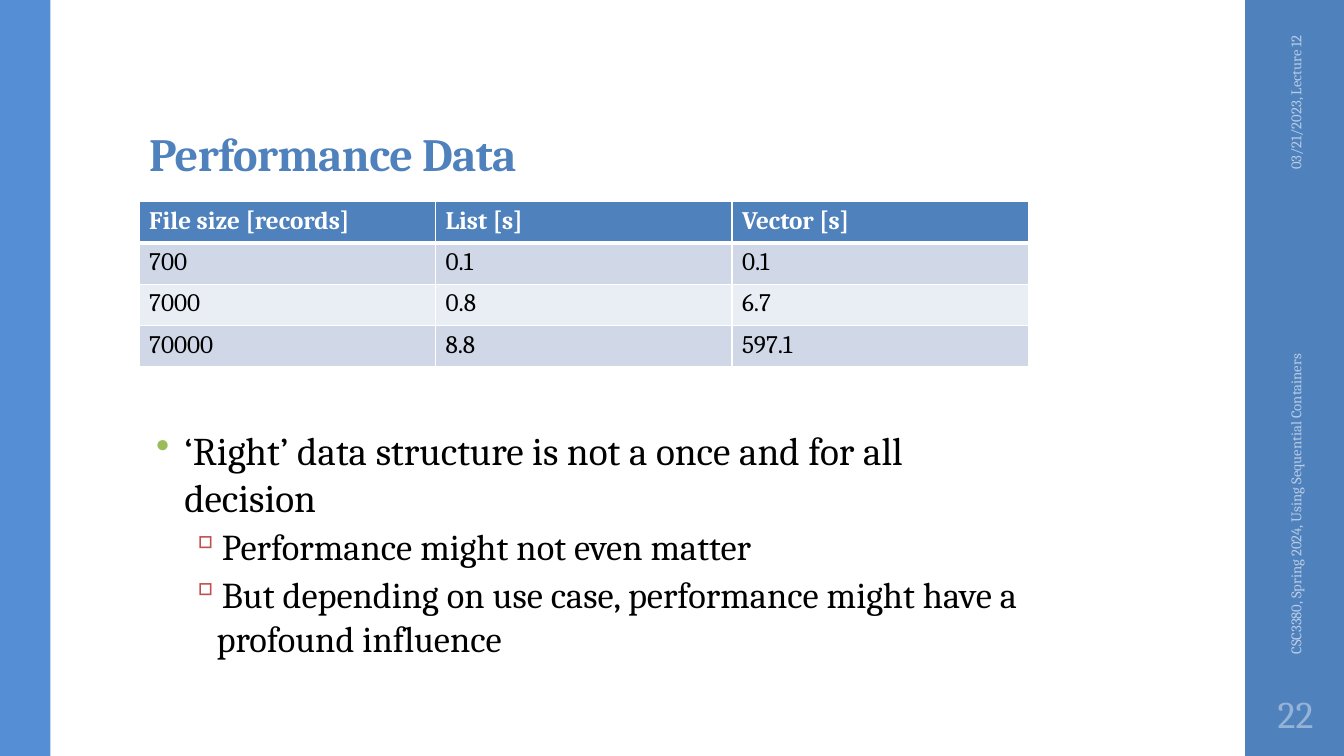
from lxml import etree
from pptx import Presentation
from pptx.dml.color import RGBColor
from pptx.enum.shapes import MSO_SHAPE
from pptx.enum.text import MSO_ANCHOR, PP_ALIGN
from pptx.oxml.ns import qn
from pptx.util import Inches, Pt

RECTANGLE = MSO_SHAPE.RECTANGLE
TOP, MIDDLE, BOTTOM = MSO_ANCHOR.TOP, MSO_ANCHOR.MIDDLE, MSO_ANCHOR.BOTTOM
LEFT, CENTER, RIGHT = PP_ALIGN.LEFT, PP_ALIGN.CENTER, PP_ALIGN.RIGHT

THEME = {
    "font": "Cambria",
    "blue": "4F81BD", "light_blue": "558ED5", "footer": "B9CDE5", "number": "95B3D7",
    "white": "FFFFFF", "black": "000000", "odd_row": "D0D8E8", "even_row": "E9EDF4",
    "green": "9BBB59", "red": "C0504D",
    "title_size": 33, "table_size": 18, "footer_size": 10.5, "number_size": 27,
    "point_size": 28, "subpoint_size": 26,
}


def style(paragraph, size, color, bold=False):
    for run in paragraph.runs:
        run.font.name = THEME["font"]
        run.font.size = Pt(THEME[size])
        run.font.bold = bold
        run.font.color.rgb = RGBColor.from_string(THEME[color])


def add_text(box, text, size, color, anchor=TOP, align=LEFT, bold=False):
    left, top, width, height = map(Inches, box)
    textbox = slide.shapes.add_textbox(left, top, width, height)
    frame = textbox.text_frame
    frame.word_wrap = True
    frame.vertical_anchor = anchor
    frame.text = text
    for paragraph in frame.paragraphs:
        paragraph.alignment = align
        style(paragraph, size, color, bold)
    return textbox


prs = Presentation()
prs.slide_width = Inches(13.33)
prs.slide_height = Inches(7.5)
slide = prs.slides.add_slide(prs.slide_layouts[6])

for left, width, color in [(12.35, 1, "blue"), (0, 0.5, "light_blue")]:
    band = slide.shapes.add_shape(RECTANGLE, Inches(left), 0, Inches(width), prs.slide_height)
    band.shadow.inherit = False
    band.fill.solid()
    band.fill.fore_color.rgb = RGBColor.from_string(THEME[color])
    band.line.fill.background()

title = add_text((1.38, 0.32, 10.6, 1.53), "Performance Data", "title_size", "blue", BOTTOM, bold=True)
title.text_frame.margin_top = Inches(0.03)
heading = title.text_frame.paragraphs[0]
heading.line_spacing = 0.9
heading.runs[0].font._element.set("spc", "-40")

timings = [
    ("File size [records]", "List [s]", "Vector [s]"),
    ("700", "0.1", "0.1"),
    ("7000", "0.8", "6.7"),
    ("70000", "8.8", "597.1"),
]
row_fills = ["blue", "odd_row", "even_row", "odd_row"]
table = slide.shapes.add_table(4, 3, Inches(1.38), Inches(2), Inches(8.82), Inches(1.62)).table
for column in table.columns:
    column.width = Inches(2.94)
for row_index, values in enumerate(timings):
    is_header = row_index == 0
    table.rows[row_index].height = Inches(0.41)
    for column_index, value in enumerate(values):
        cell = table.cell(row_index, column_index)
        cell.text = value
        style(cell.text_frame.paragraphs[0], "table_size", "white" if is_header else "black", is_header)
        for side in ("lnL", "lnR", "lnT", "lnB"):
            below_header = (row_index, side) in [(0, "lnB"), (1, "lnT")]
            border = etree.SubElement(cell._tc.get_or_add_tcPr(), qn(f"a:{side}"),
                                      w=str(Pt(3 if below_header else 1)))
            border_fill = etree.SubElement(border, qn("a:solidFill"))
            etree.SubElement(border_fill, qn("a:srgbClr"), val=THEME["white"])
        cell.fill.solid()
        cell.fill.fore_color.rgb = RGBColor.from_string(THEME[row_fills[row_index]])

date = add_text((11.81, 1.09, 2.08, 0.4), "03/21/2023, Lecture 12",
                "footer_size", "footer", MIDDLE, RIGHT)
course = add_text((10.89, 4.43, 3.92, 0.4), "CSC3380, Spring 2024, Using Sequential Containers",
                  "footer_size", "footer", MIDDLE)
for footer in (date, course):
    footer.rotation = 270
page_number = add_text((12.35, 6.75, 1, 0.65), "22", "number_size", "number", MIDDLE, CENTER)
page_number.text_frame.margin_left = page_number.text_frame.margin_right = Inches(0.05)

conclusions = [
    (0, "‘Right’ data structure is not a once and for all decision"),
    (1, "Performance might not even matter"),
    (1, "But depending on use case, performance might have a profound influence"),
]
levels = [
    (0.4, -0.28, "•", "green", "point_size"),
    (0.72, -0.27, "▫", "red", "subpoint_size"),
]
body = add_text((1.33, 4.18, 9, 2.57), "\n".join(text for _, text in conclusions),
                "point_size", "black")
for index, (paragraph, (level, _)) in enumerate(zip(body.text_frame.paragraphs, conclusions)):
    margin, indent, bullet, bullet_color, size = levels[level]
    paragraph.level = level
    if index:
        paragraph.space_before = Pt(3)
    properties = paragraph._p.get_or_add_pPr()
    properties.set("marL", str(Inches(margin)))
    properties.set("indent", str(Inches(indent)))
    color_element = etree.SubElement(properties, qn("a:buClr"))
    etree.SubElement(color_element, qn("a:srgbClr"), val=THEME[bullet_color])
    etree.SubElement(properties, qn("a:buChar"), char=bullet)
    style(paragraph, size, "black")

prs.save("out.pptx")
